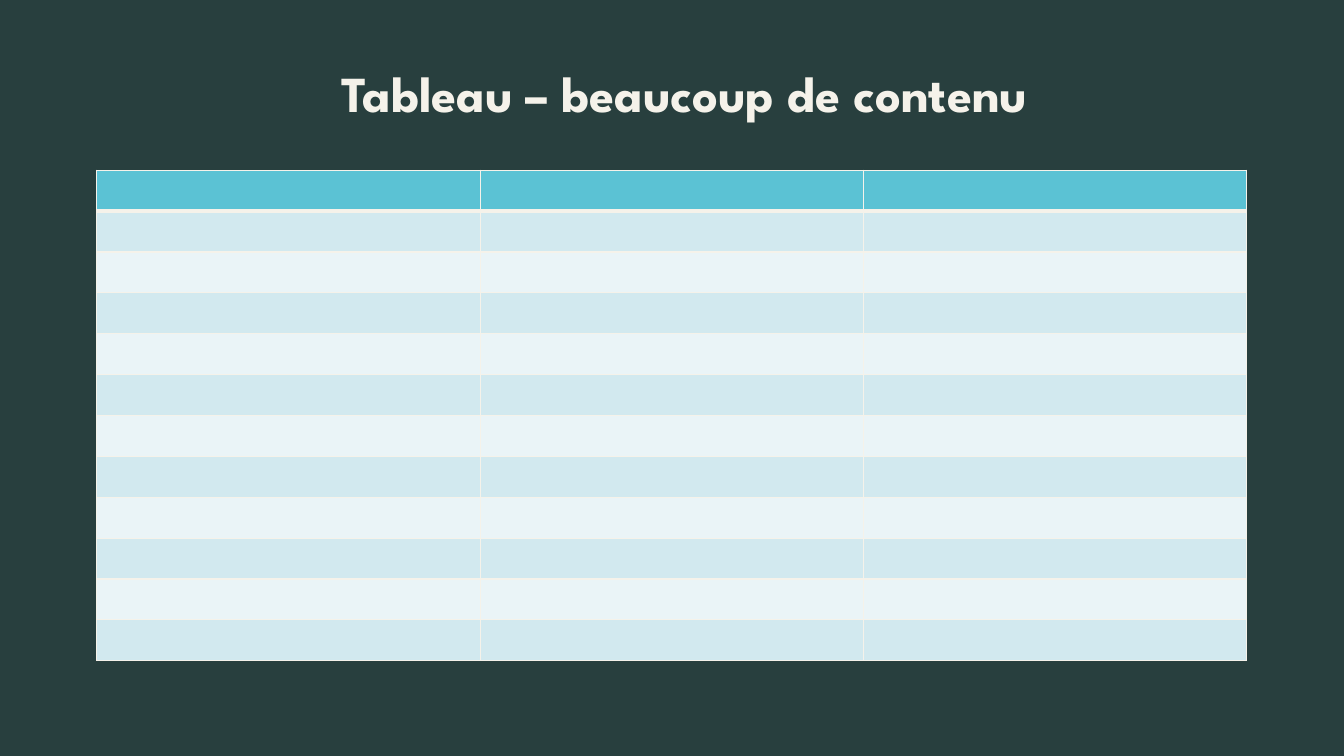
from lxml.etree import SubElement
from pptx import Presentation
from pptx.dml.color import RGBColor
from pptx.enum.text import MSO_ANCHOR, PP_ALIGN
from pptx.oxml.ns import qn
from pptx.util import Cm, Pt

COLORS = {
    "background": "283F3E",
    "cream": "F5F2EA",
    "header": "5BC2D4",
    "odd_row": "D2E9EF",
    "even_row": "EAF4F7",
}
FONT = "League Spartan"
ROWS, COLUMNS = 12, 3


def color(name):
    return RGBColor.from_string(COLORS[name])


def add_title(page, left, top, width, height):
    title = page.shapes.title
    title.left, title.top, title.width, title.height = left, top, width, height
    frame = title.text_frame
    frame.word_wrap = True
    frame.vertical_anchor = MSO_ANCHOR.MIDDLE
    para = frame.paragraphs[0]
    para.alignment = PP_ALIGN.CENTER
    para.line_spacing = 0.9
    span = para.add_run()
    span.text = "Tableau – beaucoup de contenu"
    span.font.name = FONT
    span.font.size = Pt(36)
    span.font.bold = True
    span.font.color.rgb = color("cream")


def set_borders(cell, widths):
    """Draw cream borders; widths maps the sides L, R, T, B to points."""
    properties = cell._tc.get_or_add_tcPr()
    for side, width in widths.items():
        line = SubElement(properties, qn(f"a:ln{side}"), w=str(Pt(width)))
        fill = SubElement(line, qn("a:solidFill"))
        SubElement(fill, qn("a:srgbClr"), val=COLORS["cream"])


def add_content_table(page, left, top, width, height):
    table = page.shapes.add_table(ROWS, COLUMNS, left, top, width, height).table
    for row in range(ROWS):
        if row == 0:
            fill_name = "header"
        else:
            fill_name = "odd_row" if row % 2 else "even_row"
        widths = {"L": 1, "R": 1, "T": 3 if row == 1 else 1, "B": 3 if row == 0 else 1}
        for column in range(COLUMNS):
            cell = table.cell(row, column)
            set_borders(cell, widths)
            cell.fill.solid()
            cell.fill.fore_color.rgb = color(fill_name)


def main():
    deck = Presentation()
    deck.slide_width, deck.slide_height = Cm(33.87), Cm(19.05)
    page = deck.slides.add_slide(deck.slide_layouts[5])
    page.background.fill.solid()
    page.background.fill.fore_color.rgb = color("background")
    add_title(page, Cm(4.55), Cm(1.4), Cm(25.4), Cm(2.03))
    add_content_table(page, Cm(2.44), Cm(4.29), Cm(28.98), Cm(12.36))
    deck.save("out.pptx")


if __name__ == "__main__":
    main()
